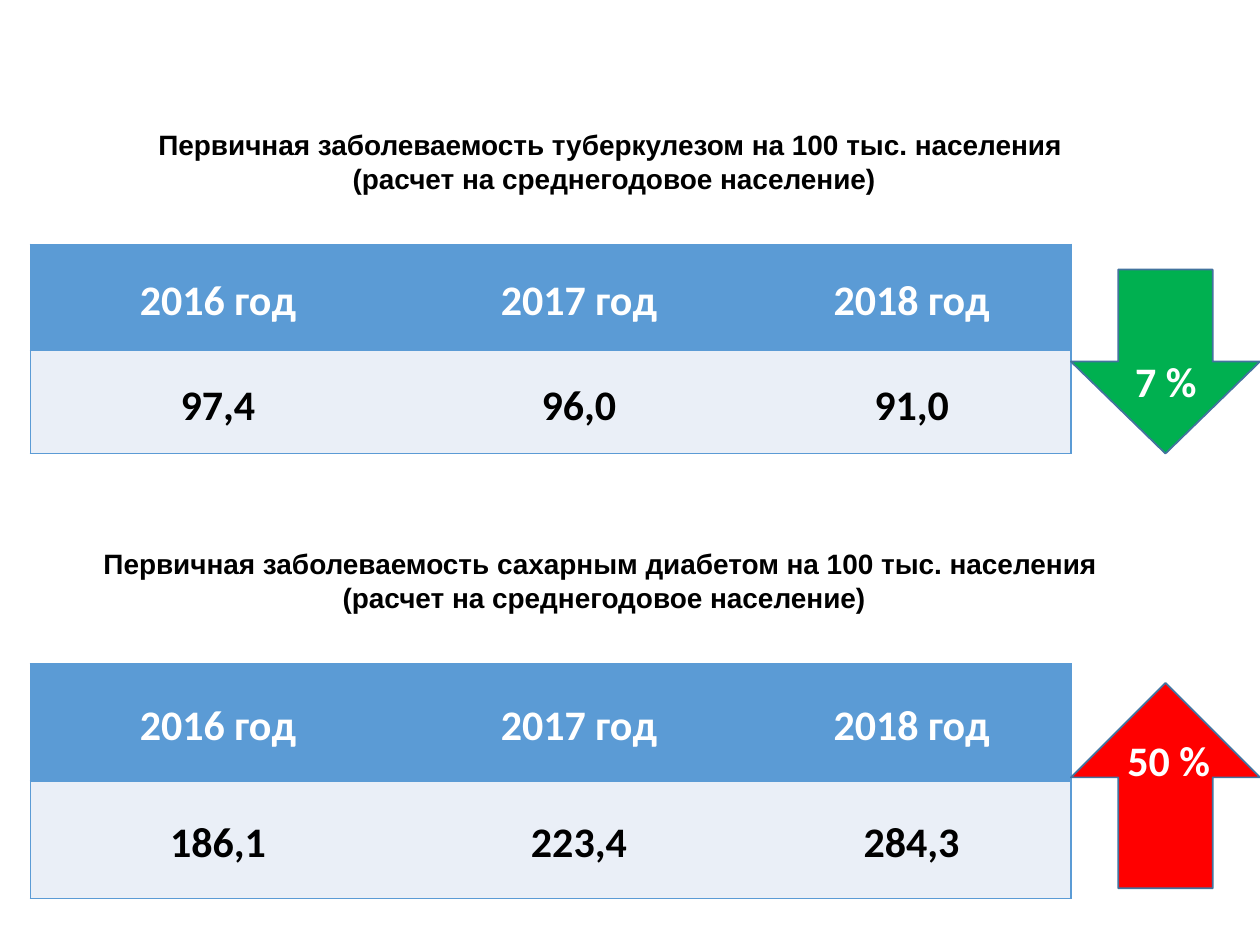
from lxml.etree import SubElement
from pptx import Presentation
from pptx.dml.color import RGBColor
from pptx.enum.shapes import MSO_SHAPE as SHAPE
from pptx.enum.text import MSO_ANCHOR as ANCHOR, MSO_AUTO_SIZE as AUTO, PP_ALIGN as ALIGN
from pptx.oxml.ns import qn
from pptx.util import Inches, Pt

BLUE, PALE, WHITE, BLACK = "5B9BD5", "EAEFF7", "FFFFFF", "000000"
YEARS = ("2016 год", "2017 год", "2018 год")
COLUMNS = (2.98, 2.75, 2.53)
LEFT = 0.24
TITLE = {"name": "Arial", "size": Pt(16), "bold": True}
VALUE = {"name": "Calibri", "size": Pt(24), "bold": True}


def rgb(value):
    """Turn a hex string into a colour."""
    return RGBColor.from_string(value)


def set_attrs(obj, values):
    """Set every attribute named in a dict."""
    for name, value in values.items():
        setattr(obj, name, value)


def write(p, text, style, color, align):
    """Write one formatted run into a paragraph."""
    p.alignment = align
    r = p.add_run()
    r.text = text
    set_attrs(r.font, style)
    r.font.color.rgb = rgb(color)


def add_text(slide, box, lines, style, color, align=ALIGN.CENTER, **frame):
    """Add a text box with one paragraph per line."""
    tf = slide.shapes.add_textbox(*map(Inches, box)).text_frame
    set_attrs(tf, {"auto_size": AUTO.SHAPE_TO_FIT_TEXT, "word_wrap": False, **frame})
    for i, line in enumerate(lines):
        p = tf.add_paragraph() if i else tf.paragraphs[0]
        write(p, line, style, color, align)


def set_borders(cell, visible):
    """Draw the visible sides of a cell and clear the others."""
    tcPr = cell._tc.get_or_add_tcPr()
    for side in "LRTB":
        ln = SubElement(tcPr, qn(f"a:ln{side}"), w=str(Pt(1)))
        if side in visible:
            fill = SubElement(ln, qn("a:solidFill"))
            SubElement(fill, qn("a:srgbClr"), val=BLUE)
        else:
            SubElement(ln, qn("a:noFill"))


def add_rates(slide, top, heights, rates):
    """Add a table of yearly rates under a header row."""
    box = map(Inches, (LEFT, top, sum(COLUMNS), sum(heights)))
    table = slide.shapes.add_table(2, len(COLUMNS), *box).table
    for column, width in zip(table.columns, COLUMNS):
        column.width = Inches(width)
    looks = ((YEARS, BLUE, WHITE), (rates, PALE, BLACK))
    for i, (texts, fill, color) in enumerate(looks):
        table.rows[i].height = Inches(heights[i])
        for j, text in enumerate(texts):
            cell = table.cell(i, j)
            set_attrs(cell, {"vertical_anchor": ANCHOR.MIDDLE,
                             "margin_left": Inches(0.07), "margin_right": Inches(0.07),
                             "margin_top": 0, "margin_bottom": 0})
            edges = {0: "L", len(COLUMNS) - 1: "R"}
            set_borders(cell, "TB" + edges.get(j, ""))
            cell.fill.solid()
            cell.fill.fore_color.rgb = rgb(fill)
            p = cell.text_frame.paragraphs[0]
            p.line_spacing = 1.15
            write(p, text, VALUE, color, ALIGN.CENTER)


def add_arrow(slide, kind, top, height, color):
    """Add a trend arrow to the right of a table."""
    box = map(Inches, (LEFT + sum(COLUMNS), top, 1.5, height))
    sp = slide.shapes.add_shape(kind, *box)
    sp.shadow.inherit = False
    sp.fill.solid()
    sp.fill.fore_color.rgb = rgb(color)
    sp.line.color.rgb = rgb("43739E")
    sp.line.width = Pt(1)


def main():
    """Build the slide with both disease rates."""
    prs = Presentation()
    prs.slide_width, prs.slide_height = Inches(10), Inches(7.5)
    slide = prs.slides.add_slide(prs.slide_layouts[6])
    add_rates(slide, 1.94, (0.84, 0.82), ("97,4", "96,0", "91,0"))
    add_rates(slide, 5.27, (0.93, 0.93), ("186,1", "223,4", "284,3"))
    basis = "(расчет на среднегодовое население)"
    add_text(slide, (1.11, 0.96, 7.53, 0.64),
             ("Первичная заболеваемость туберкулезом на 100 тыс. населения ", basis),
             TITLE, BLACK, vertical_anchor=ANCHOR.MIDDLE)
    add_text(slide, (LEFT, 4.29, 9.11, 0.91),
             ("Первичная заболеваемость сахарным диабетом на 100 тыс. населения ", basis),
             TITLE, BLACK, word_wrap=True)
    add_arrow(slide, SHAPE.DOWN_ARROW, 2.14, 1.46, "00B050")
    add_arrow(slide, SHAPE.UP_ARROW, 5.42, 1.63, "FF0000")
    add_text(slide, (8.91, 2.77, 0.69, 0.5), ("7 %",), VALUE, WHITE, ALIGN.LEFT)
    add_text(slide, (8.85, 5.78, 0.86, 0.5), ("50 %",), VALUE, WHITE, ALIGN.LEFT)
    prs.save("out.pptx")


if __name__ == "__main__":
    main()
